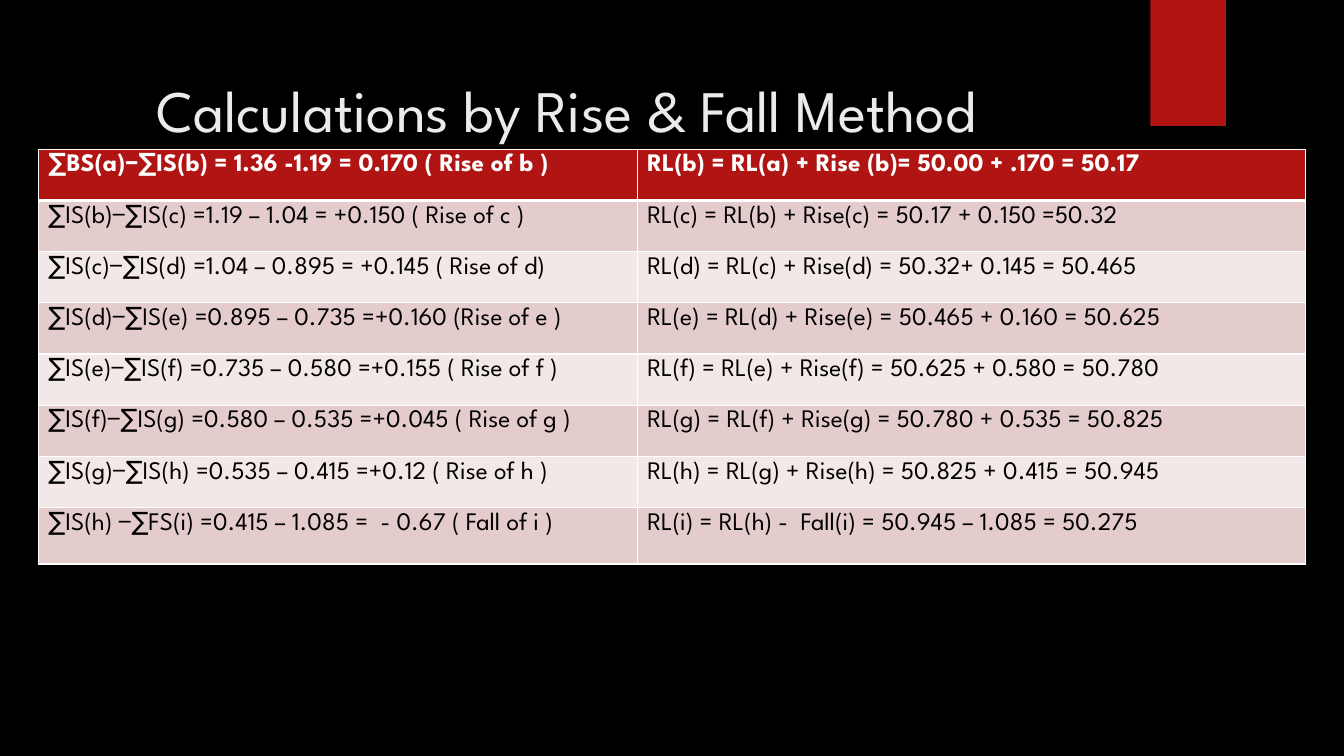
from lxml import etree
from pptx import Presentation
from pptx.dml.color import RGBColor
from pptx.enum.shapes import MSO_SHAPE
from pptx.enum.text import MSO_ANCHOR
from pptx.oxml.ns import qn
from pptx.util import Inches, Pt

RECTANGLE = MSO_SHAPE.RECTANGLE
TOP = MSO_ANCHOR.TOP

# Content
TITLE = "Calculations by Rise & Fall Method"
LEVELS = [
    ("∑BS(a)−∑IS(b) = 1.36 -1.19 = 0.170 ( Rise of b )",
     "RL(b) = RL(a) + Rise (b)= 50.00 + .170 = 50.17"),
    ("∑IS(b)−∑IS(c) =1.19 – 1.04 = +0.150 ( Rise of c )",
     "RL(c) = RL(b) + Rise(c) = 50.17 + 0.150 =50.32"),
    ("∑IS(c)−∑IS(d) =1.04 – 0.895 = +0.145 ( Rise of d)",
     "RL(d) = RL(c) + Rise(d) = 50.32+ 0.145 = 50.465"),
    ("∑IS(d)−∑IS(e) =0.895 – 0.735 =+0.160 (Rise of e )",
     "RL(e) = RL(d) + Rise(e) = 50.465 + 0.160 = 50.625"),
    ("∑IS(e)−∑IS(f) =0.735 – 0.580 =+0.155 ( Rise of f )",
     "RL(f) = RL(e) + Rise(f) = 50.625 + 0.580 = 50.780"),
    ("∑IS(f)−∑IS(g) =0.580 – 0.535 =+0.045 ( Rise of g )",
     "RL(g) = RL(f) + Rise(g) = 50.780 + 0.535 = 50.825"),
    ("∑IS(g)−∑IS(h) =0.535 – 0.415 =+0.12 ( Rise of h )",
     "RL(h) = RL(g) + Rise(h) = 50.825 + 0.415 = 50.945"),
    ("∑IS(h) −∑FS(i) =0.415 – 1.085 =  - 0.67 ( Fall of i )",
     "RL(i) = RL(h) -  Fall(i) = 50.945 – 1.085 = 50.275"),
]

# Look
COLORS = {"background": "000000", "accent": "B01513", "title": "EBEBEB",
          "header": "FFFFFF", "body": "000000", "border": "FFFFFF",
          "odd": "E4CCCC", "even": "F2E8E7"}
FONT = "League Spartan"
TITLE_FORMAT = {"name": FONT, "size": Pt(42), "bold": False}
HEADER_FORMAT = {"name": FONT, "size": Pt(18), "bold": True}
BODY_FORMAT = {**HEADER_FORMAT, "bold": False}

# Layout in inches
SLIDE = (13.33, 7.5)
RIBBON = (11.41, 0, 0.75, 1.25)
TITLE_BOX = (1.45, 0.49, 9.95, 1.53)
TITLE_INSET = 0.24
TABLE_LEFT, TABLE_TOP = 0.38, 1.48
COLUMNS = (5.94, 6.63)
ROWS = [0.508] * (len(LEVELS) - 1) + [0.56]
THIN, THICK = 1, 3


def inches(lengths):
    return [Inches(length) for length in lengths]


def rgb(key):
    return RGBColor.from_string(COLORS[key])


def paint(fill, key):
    fill.solid()
    fill.fore_color.rgb = rgb(key)


def write(frame, text, formats, color):
    run = frame.paragraphs[0].add_run()
    run.text = text
    for name, value in formats.items():
        setattr(run.font, name, value)
    run.font.color.rgb = rgb(color)


def add_borders(cell, row):
    widths = {"L": THIN, "R": THIN,
              "T": THICK if row == 1 else THIN,
              "B": THICK if row == 0 else THIN}
    properties = cell._tc.get_or_add_tcPr()
    for side, width in widths.items():
        line = etree.SubElement(properties, qn("a:ln" + side), w=str(Pt(width)))
        solid = etree.SubElement(line, qn("a:solidFill"))
        etree.SubElement(solid, qn("a:srgbClr"), val=COLORS["border"])


presentation = Presentation()
presentation.slide_width, presentation.slide_height = inches(SLIDE)
slide = presentation.slides.add_slide(presentation.slide_layouts[6])
paint(slide.background.fill, "background")

# Ribbon at the top right
ribbon = slide.shapes.add_shape(RECTANGLE, *inches(RIBBON))
ribbon.shadow.inherit = False
paint(ribbon.fill, "accent")
ribbon.line.fill.background()

# Title
title = slide.shapes.add_textbox(*inches(TITLE_BOX)).text_frame
title.word_wrap = True
title.vertical_anchor = TOP
title.margin_top = Inches(TITLE_INSET)
write(title, TITLE, TITLE_FORMAT, "title")

# Table of level differences and reduced levels
levels = slide.shapes.add_table(
    len(ROWS), len(COLUMNS),
    *inches((TABLE_LEFT, TABLE_TOP, sum(COLUMNS), sum(ROWS)))).table
for column, width in zip(levels.columns, COLUMNS):
    column.width = Inches(width)
for row, (height, texts) in enumerate(zip(ROWS, LEVELS)):
    levels.rows[row].height = Inches(height)
    is_header = row == 0
    band = "accent" if is_header else "odd" if row % 2 else "even"
    for column, text in enumerate(texts):
        cell = levels.cell(row, column)
        add_borders(cell, row)
        paint(cell.fill, band)
        write(cell.text_frame, text,
              HEADER_FORMAT if is_header else BODY_FORMAT,
              "header" if is_header else "body")

presentation.save("out.pptx")
